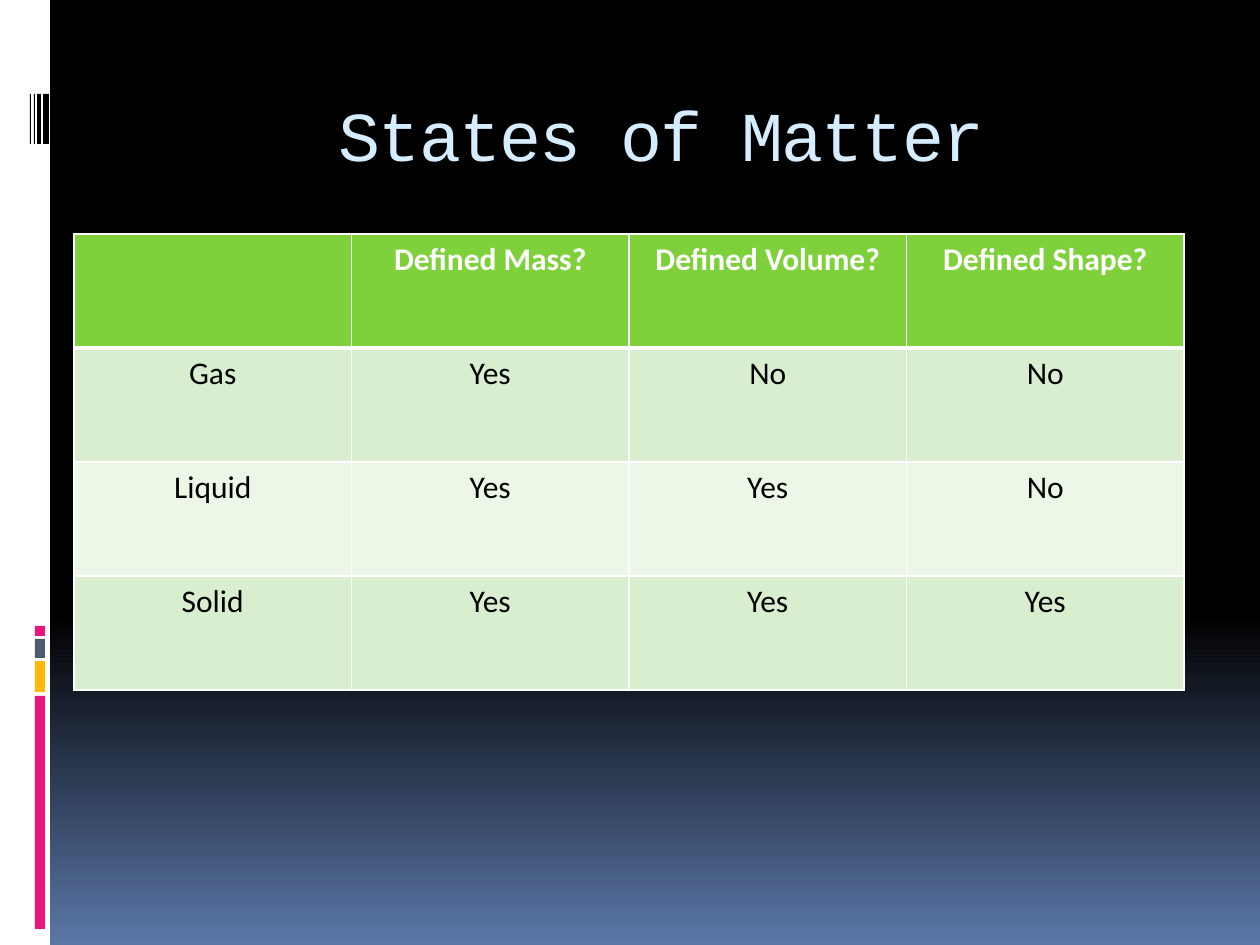
from dataclasses import dataclass

from lxml import etree
from pptx import Presentation
from pptx.dml.color import RGBColor
from pptx.enum.shapes import MSO_SHAPE
from pptx.enum.text import MSO_ANCHOR, PP_ALIGN
from pptx.oxml import parse_xml
from pptx.oxml.ns import qn
from pptx.util import Pt

RECTANGLE = MSO_SHAPE.RECTANGLE
MIDDLE = MSO_ANCHOR.MIDDLE
CENTER = PP_ALIGN.CENTER
DRAWING_NAMESPACE = "http://schemas.openxmlformats.org/drawingml/2006/main"
TITLE_ONLY = 5


@dataclass(frozen=True)
class Theme:
    """Colours, fonts and type sizes of the deck."""

    white: str = "FFFFFF"
    black: str = "000000"
    sky: str = "5B77A8"
    pink: str = "EA157A"
    amber: str = "FEB80A"
    slate: str = "4E5B6F"
    title: str = "D6ECFF"
    header: str = "7FD13B"
    bands: tuple = ("D8EECE", "ECF7E8")
    title_font: str = "Courier New"
    body_font: str = "Calibri"
    title_size: int = 40
    body_size: int = 18
    thin: int = 1
    thick: int = 3


THEME = Theme()
PAGE_WIDTH, PAGE_HEIGHT = 1260, 945
SIDEBAR_BOX = (0, 0, 50, PAGE_HEIGHT)
TITLE_BOX = (126, 71, 1071, 126)
TABLE_BOX = (74, 234, 1110, 456)
STATES = (
    ("", "Defined Mass?", "Defined Volume?", "Defined Shape?"),
    ("Gas", "Yes", "No", "No"),
    ("Liquid", "Yes", "Yes", "No"),
    ("Solid", "Yes", "Yes", "Yes"),
)


def px(length):
    """Turn pixels into EMU."""
    return round(length * 914400 / 126)


def paint_background(page):
    """Fill the page with a vertical gradient."""
    fill = page.background.fill
    fill.gradient()
    fill.gradient_angle = 270
    stops = page.background._cSld.find(".//" + qn("a:gsLst"))
    for stop in list(stops):
        stops.remove(stop)
    for percent, color in ((0, THEME.black), (65, THEME.black), (100, THEME.sky)):
        stops.append(parse_xml(
            f'<a:gs xmlns:a="{DRAWING_NAMESPACE}" pos="{percent * 1000}">'
            f'<a:srgbClr val="{color}"/></a:gs>'))


def add_block(page, box, color):
    """Add a plain filled rectangle."""
    block = page.shapes.add_shape(RECTANGLE, *map(px, box))
    block.shadow.inherit = False
    block.fill.solid()
    block.fill.fore_color.rgb = RGBColor.from_string(color)
    block.line.fill.background()


def add_sidebar(page, box):
    """Add the white strip with its coloured bars and black stripes."""
    left, top, _, _ = box
    add_block(page, box, THEME.white)
    bars = ((696, 233, THEME.pink), (661, 31, THEME.amber),
            (639, 19, THEME.slate), (626, 10, THEME.pink))
    for offset, height, color in bars:
        add_block(page, (left + 35, top + offset, 10, height), color)
    for offset, width in ((43, 6), (37, 4), (34, 1), (30, 1)):
        add_block(page, (left + offset, top + 94, width, 50), THEME.black)


def style_text(frame, font, size, color, bold=False):
    """Centre the text and format its runs."""
    for para in frame.paragraphs:
        para.alignment = CENTER
        for span in para.runs:
            span.font.name = font
            span.font.size = Pt(size)
            span.font.bold = bold
            span.font.color.rgb = RGBColor.from_string(color)


def add_title(page, box, text):
    """Place and format the title placeholder."""
    title = page.shapes.title
    title.left, title.top, title.width, title.height = map(px, box)
    frame = title.text_frame
    frame.text = text
    frame.vertical_anchor = MIDDLE
    style_text(frame, THEME.title_font, THEME.title_size, THEME.title)
    for span in frame.paragraphs[0].runs:
        span.font._element.set("spc", "-100")


def add_borders(cell, top, bottom):
    """Draw white borders of the given top and bottom widths."""
    properties = cell._tc.get_or_add_tcPr()
    for side, width in (("L", THEME.thin), ("R", THEME.thin), ("T", top), ("B", bottom)):
        line = etree.SubElement(properties, qn("a:ln" + side), w=str(Pt(width)))
        solid = etree.SubElement(line, qn("a:solidFill"))
        etree.SubElement(solid, qn("a:srgbClr"), val=THEME.white)


def add_states_table(page, box, rows):
    """Add the table with a header row and alternating bands."""
    count = len(rows[0])
    table = page.shapes.add_table(len(rows), count, *map(px, box)).table
    table.horz_banding = False
    table.first_row = False
    for column in table.columns:
        column.width = px(box[2]) // count
    for index, values in enumerate(rows):
        is_header = index == 0
        table.rows[index].height = px(box[3]) // len(rows)
        fill = THEME.header if is_header else THEME.bands[(index - 1) % 2]
        ink = THEME.white if is_header else THEME.black
        top = THEME.thick if index == 1 else THEME.thin
        bottom = THEME.thick if is_header else THEME.thin
        for cell, value in zip(table.rows[index].cells, values):
            cell.text_frame.text = value
            style_text(cell.text_frame, THEME.body_font, THEME.body_size, ink, is_header)
            add_borders(cell, top, bottom)
            cell.fill.solid()
            cell.fill.fore_color.rgb = RGBColor.from_string(fill)


def main():
    """Build the deck and save it."""
    deck = Presentation()
    deck.slide_width, deck.slide_height = px(PAGE_WIDTH), px(PAGE_HEIGHT)
    page = deck.slides.add_slide(deck.slide_layouts[TITLE_ONLY])
    paint_background(page)
    add_sidebar(page, SIDEBAR_BOX)
    add_title(page, TITLE_BOX, "States of Matter")
    add_states_table(page, TABLE_BOX, STATES)
    deck.save("out.pptx")


if __name__ == "__main__":
    main()
